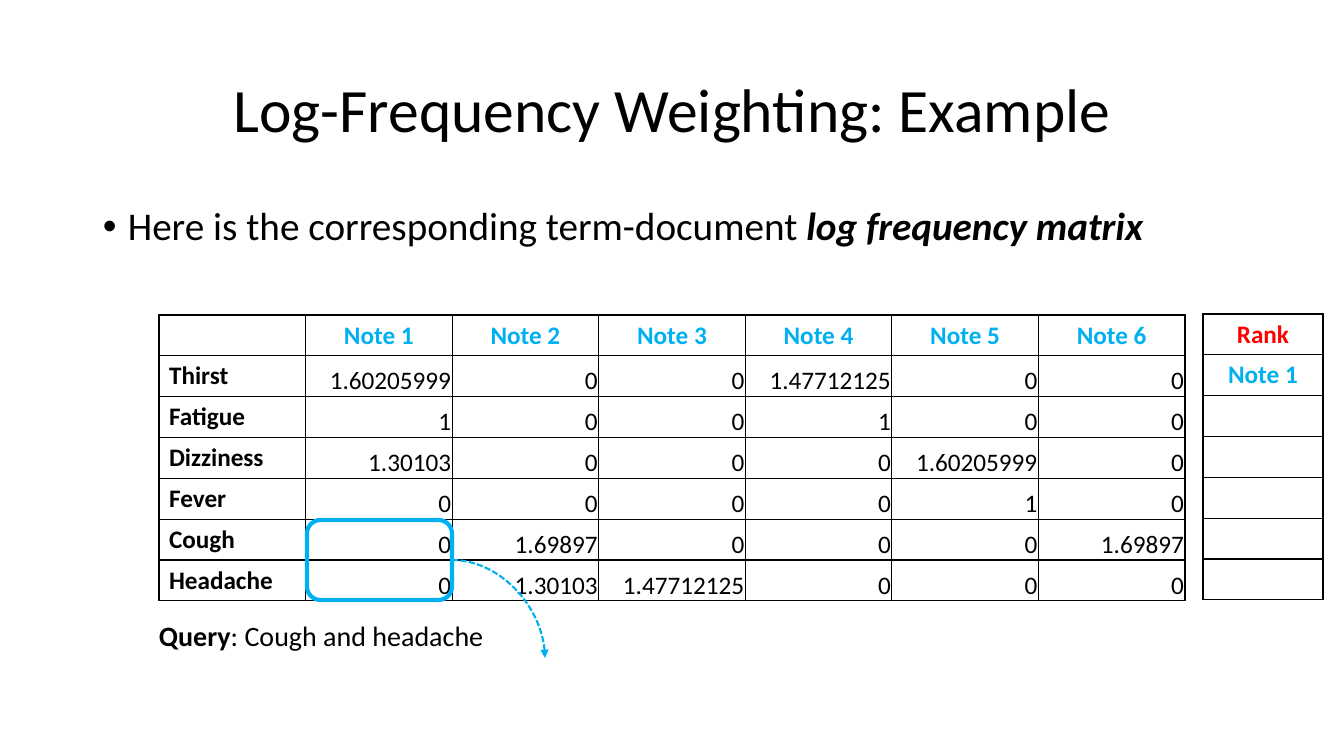
from lxml.etree import SubElement
from pptx import Presentation
from pptx.dml.color import RGBColor
from pptx.enum.dml import MSO_LINE
from pptx.enum.shapes import MSO_CONNECTOR, MSO_SHAPE
from pptx.enum.text import MSO_ANCHOR, MSO_AUTO_SIZE, PP_ALIGN
from pptx.oxml import parse_xml
from pptx.oxml.ns import nsdecls, qn
from pptx.util import Pt

PX = 9071
BLACK, CYAN, RED = "000000", "00B0F0", "FF0000"
hex_color = RGBColor.from_string


def write(paragraph, text, color, **font_values):
    run = paragraph.add_run()
    run.text = text
    run.font.color.rgb = hex_color(color)
    for name, value in {"name": "Calibri", **font_values}.items():
        setattr(run.font, name, value)


presentation = Presentation()
presentation.slide_width = 1344 * PX
presentation.slide_height = 756 * PX
slide = presentation.slides.add_slide(presentation.slide_layouts[6])
shapes = slide.shapes

title = shapes.add_textbox(93 * PX, 40 * PX, 1159 * PX, 146 * PX).text_frame
title.word_wrap = True
title.vertical_anchor = MSO_ANCHOR.MIDDLE
heading = title.paragraphs[0]
heading.alignment = PP_ALIGN.CENTER
heading.line_spacing = 0.9
write(heading, "Log-Frequency Weighting: Example", BLACK, size=Pt(44))

body = shapes.add_textbox(93 * PX, 202 * PX, 1181 * PX, 514 * PX).text_frame
body.word_wrap = True
statement = body.paragraphs[0]
statement.line_spacing = 0.9
statement.space_before = Pt(10)
write(statement, "Here is the corresponding term-document ", BLACK, size=Pt(28))
write(statement, "log frequency matrix", BLACK, size=Pt(28), bold=True, italic=True)
bullet = statement._p.get_or_add_pPr()
bullet.set("marL", str(25 * PX))
bullet.set("indent", str(-25 * PX))
SubElement(bullet, qn("a:buFont"), typeface="Arial")
SubElement(bullet, qn("a:buChar"), char="•")

matrix = [
    ["", *(f"Note {number}" for number in range(1, 7))],
    ["Thirst", "1.60205999", "0", "0", "1.47712125", "0", "0"],
    ["Fatigue", "1", "0", "0", "1", "0", "0"],
    ["Dizziness", "1.30103", "0", "0", "0", "1.60205999", "0"],
    ["Fever", "0", "0", "0", "0", "1", "0"],
    ["Cough", "0", "1.69897", "0", "0", "0", "1.69897"],
    ["Headache", "0", "1.30103", "1.47712125", "0", "0", "0"],
]
ranking = [["Rank"], ["Note 1"], [""], [""], [""], [""], [""]]
number_format = {
    "vertical_anchor": MSO_ANCHOR.BOTTOM,
    "margin_left": PX,
    "margin_right": PX,
    "margin_top": PX,
    "margin_bottom": 0,
}

for rows, left, top, width in ((matrix, 159, 315, 1026), (ranking, 1203, 314, 120)):
    table = shapes.add_table(
        len(rows), len(rows[0]), left * PX, top * PX, width * PX, 286 * PX
    ).table
    table.first_row = False
    table.horz_banding = False
    for row, texts in enumerate(rows):
        for column, text in enumerate(texts):
            cell = table.cell(row, column)
            for side in ("lnL", "lnR", "lnT", "lnB"):
                cell._tc.get_or_add_tcPr().append(parse_xml(
                    f'<a:{side} {nsdecls("a")} w="12700"><a:solidFill>'
                    f'<a:srgbClr val="{BLACK}"/></a:solidFill></a:{side}>'
                ))
            cell.fill.background()
            if not text:
                continue
            entry = cell.text_frame.paragraphs[0]
            is_number = text[0].isdigit()
            color = BLACK
            if is_number:
                entry.alignment = PP_ALIGN.RIGHT
                for name, value in number_format.items():
                    setattr(cell, name, value)
            elif row == 0 or rows is ranking:
                entry.alignment = PP_ALIGN.CENTER
                color = RED if text == "Rank" else CYAN
            write(entry, text, color, size=Pt(18), bold=not is_number)

highlight = shapes.add_shape(
    MSO_SHAPE.ROUNDED_RECTANGLE, 307 * PX, 520 * PX, 145 * PX, 80 * PX
)
highlight.shadow.inherit = False
highlight.fill.background()
highlight.line.color.rgb = hex_color(CYAN)
highlight.line.width = Pt(3)

query = shapes.add_textbox(149 * PX, 614 * PX, 348 * PX, 44 * PX).text_frame
query.word_wrap = False
query.auto_size = MSO_AUTO_SIZE.SHAPE_TO_FIT_TEXT
write(query.paragraphs[0], "Query", BLACK, size=Pt(20), bold=True)
write(query.paragraphs[0], ": Cough and headache", BLACK, size=Pt(20))

arrow = shapes.add_connector(
    MSO_CONNECTOR.CURVE, 452 * PX, 560 * PX, 545 * PX, 658 * PX
)
arrow.line.color.rgb = hex_color(CYAN)
arrow.line.width = Pt(1.5)
arrow.line.dash_style = MSO_LINE.SQUARE_DOT
arrow_properties = arrow._element.spPr
arrow_properties.find(qn("a:prstGeom")).set("prst", "curvedConnector2")
SubElement(arrow_properties.find(qn("a:ln")), qn("a:tailEnd"), type="triangle")
SubElement(arrow_properties, qn("a:effectLst"))

presentation.save("out.pptx")
